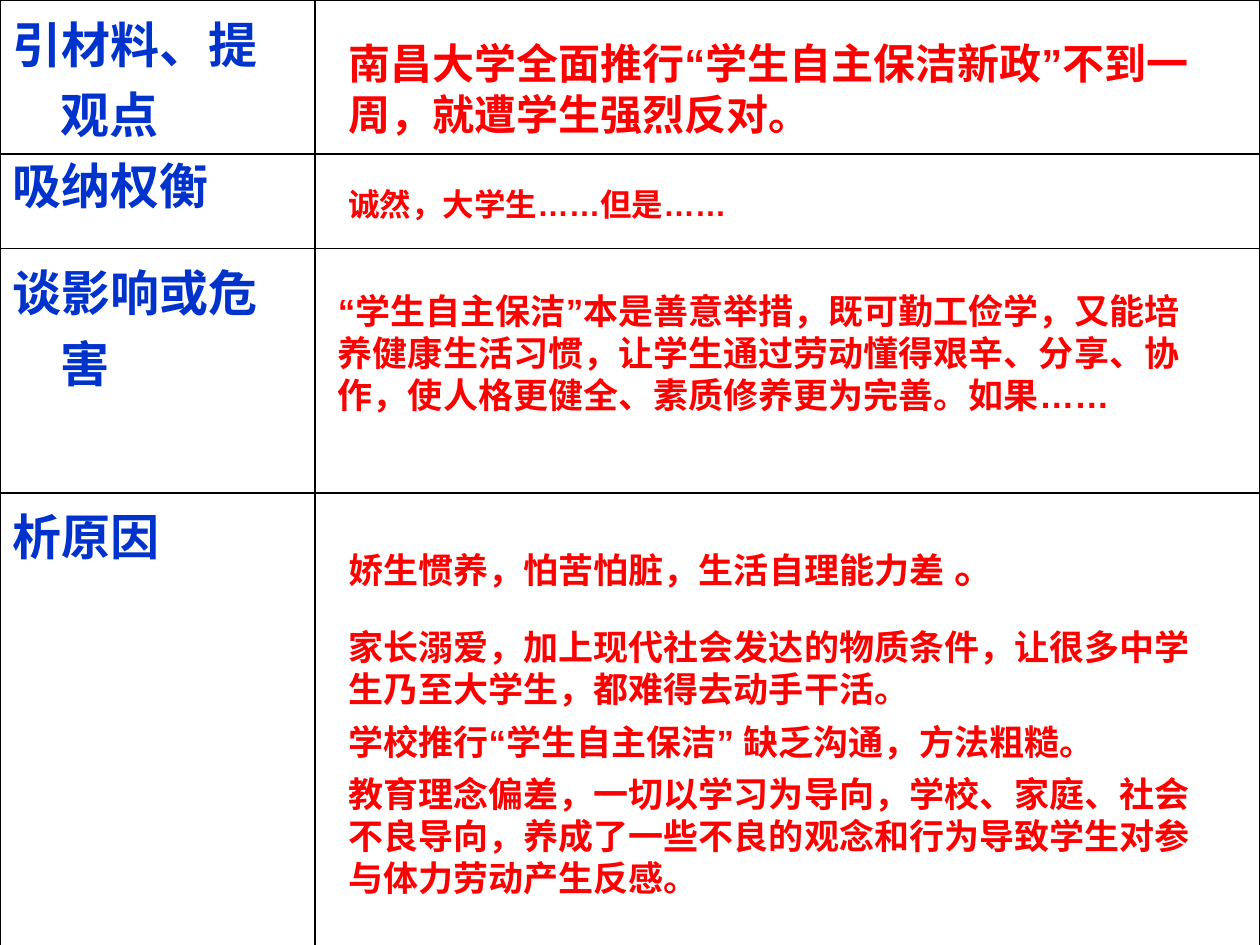
from lxml.etree import SubElement
from pptx import Presentation
from pptx.dml.color import RGBColor as Color
from pptx.enum.text import MSO_AUTO_SIZE as AutoSize
from pptx.oxml import parse_xml
from pptx.oxml.ns import nsdecls, qn
from pptx.util import Emu, Inches, Pt

COLORS = {"label": "0033CC", "note": "FF0000", "border": "000000"}
LATIN, CHINESE = "Arial", "Noto Sans CJK SC"
GRID = Inches(10) / 120
COLUMNS = [30, 90]
LABELS = [
    (14, "引材料、提观点", CHINESE),
    (9, "吸纳权衡", LATIN),
    (23.25, "谈影响或危害", CHINESE),
    (52.7, "析原因", CHINESE),
]
NOTES = [
    (32, 3, 85, 14.5, 24, ["南昌大学全面推行“学生自主保洁新政”不到一周，就遭学生强烈反对。"]),
    (32, 17, 85, 4.8, 18, ["诚然，大学生……但是……"]),
    (31, 27, 85, 13.3, 20, ["“学生自主保洁”本是善意举措，既可勤工俭学，又能培养健康生活习惯，"
                            "让学生通过劳动懂得艰辛、分享、协作，使人格更健全、素质修养更为完善。如果……"]),
    (32, 51, 88, 6, 20, ["娇生惯养，怕苦怕脏，生活自理能力差 ", "。"]),
    (32, 59, 85, 9.3, 20, ["家长溺爱，加上现代社会发达的物质条件，让很多中学生乃至大学生，都难得去动手干活。"]),
    (32, 68, 85, 5.3, 20, ["学校推行“学生自主保洁” 缺乏沟通，方法粗糙。"]),
    (32, 73, 84, 13.3, 20, ["教育理念偏差，一切以学习为导向，学校、家庭、社会不良导向，"
                            "养成了一些不良的观念和行为导致学生对参与体力劳动产生反感。"]),
]
FULL_STOP_SIZE = 24


def grid(units):
    return Emu(round(units * GRID))


def style_span(span, size, color, font):
    span.font.size = Pt(size)
    span.font.bold = True
    span.font.color.rgb = Color.from_string(COLORS[color])
    span.font.name = font
    SubElement(span.font._element, qn("a:ea")).set("typeface", font)


def add_borders(cell):
    cell.fill.background()
    properties = cell._tc.get_or_add_tcPr()
    for index, side in enumerate(("lnL", "lnR", "lnT", "lnB")):
        properties.insert(index, parse_xml(
            f'<a:{side} {nsdecls("a")} w="{Pt(1)}"><a:solidFill>'
            f'<a:srgbClr val="{COLORS["border"]}"/></a:solidFill></a:{side}>'))


def add_label(cell, text, font):
    para = cell.text_frame.paragraphs[0]
    para.text = text
    indent = Inches(0.38)
    properties = para._p.get_or_add_pPr()
    properties.set("marL", str(indent))
    properties.set("indent", str(-indent))
    style_span(para.runs[0], 28, "label", font)


def add_outline_table(page):
    height = sum(row[0] for row in LABELS)
    table = page.shapes.add_table(len(LABELS), len(COLUMNS), 0, 0,
                                  grid(sum(COLUMNS)), grid(height)).table
    table.first_row = table.horz_banding = False
    for column, width in zip(table.columns, COLUMNS):
        column.width = grid(width)
    for index, (row_height, text, font) in enumerate(LABELS):
        table.rows[index].height = grid(row_height)
        add_label(table.cell(index, 0), text, font)
    for cell in table.iter_cells():
        add_borders(cell)


def add_note(page, left, top, width, height, size, texts):
    box = page.shapes.add_textbox(*map(grid, (left, top, width, height)))
    frame = box.text_frame
    frame.word_wrap = True
    frame.auto_size = AutoSize.SHAPE_TO_FIT_TEXT
    for text in texts:
        span = frame.paragraphs[0].add_run()
        span.text = text
        style_span(span, FULL_STOP_SIZE if text == "。" else size, "note", LATIN)


def main():
    deck = Presentation()
    deck.slide_width, deck.slide_height = grid(120), grid(90)
    page = deck.slides.add_slide(deck.slide_layouts[6])
    add_outline_table(page)
    for note in NOTES:
        add_note(page, *note)
    deck.save("out.pptx")


if __name__ == "__main__":
    main()
